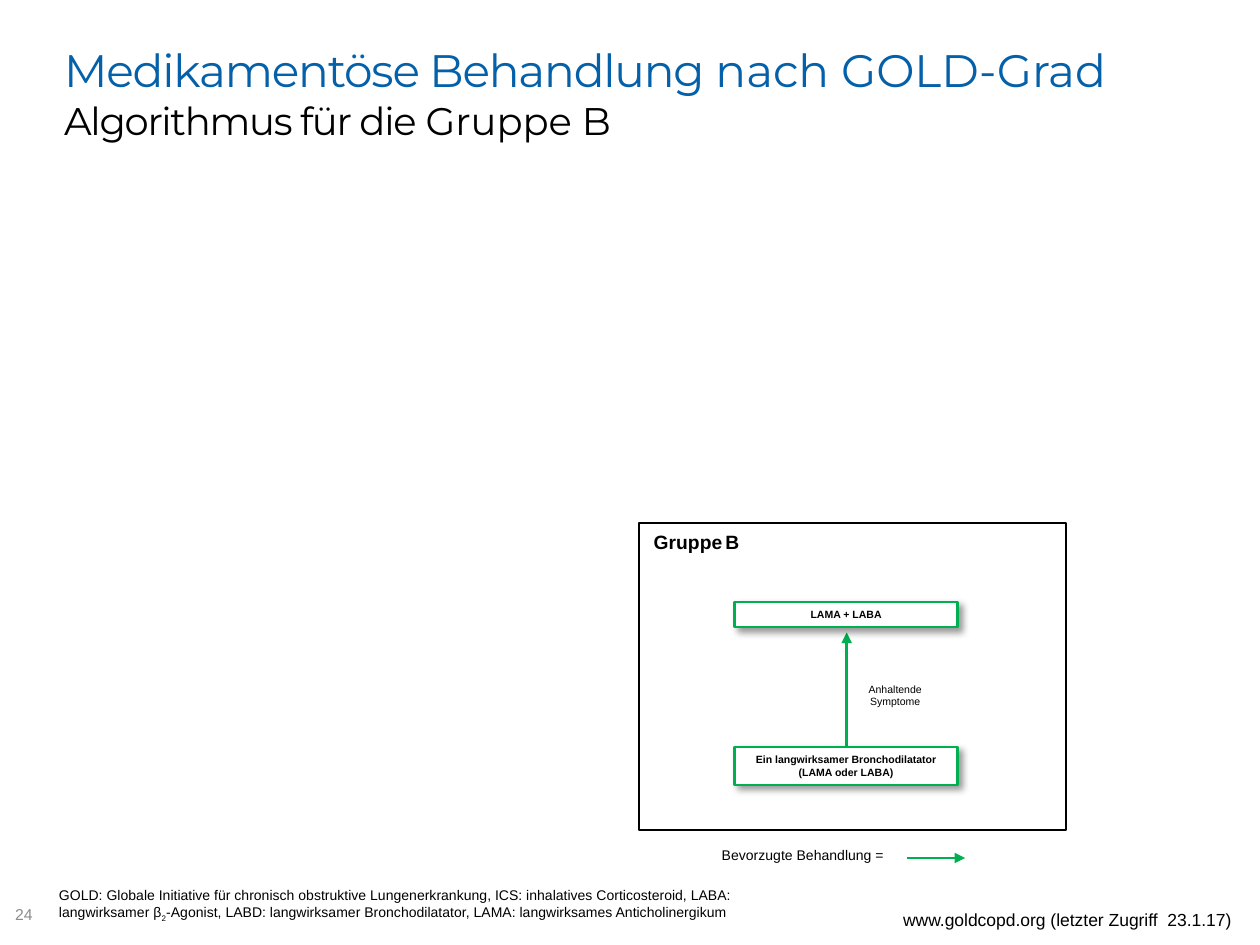
from dataclasses import dataclass

from lxml import etree
from pptx import Presentation
from pptx import util as u
from pptx.dml import color as dml
from pptx.enum import shapes, text
from pptx.oxml import ns

BLACK, WHITE, GREEN = "000000", "FFFFFF", "00B050"
BLUE, GREY = "0460A9", "8C8C8C"
CENTER, RIGHT = text.PP_ALIGN.CENTER, text.PP_ALIGN.RIGHT
MIDDLE, TOP = text.MSO_ANCHOR.MIDDLE, text.MSO_ANCHOR.TOP
INSETS = (0.1, 0.05, 0.1, 0.05)


@dataclass
class Span:
    words: str
    size: float
    color: str = BLACK
    bold: bool = False
    font: str = "Arial"
    spacing: float = 0
    baseline: int = 0


@dataclass
class Area:
    left: float
    top: float
    width: float
    height: float

    def lengths(self) -> list:
        return [u.Inches(n) for n in (self.left, self.top, self.width, self.height)]


@dataclass
class Step:
    area: Area
    lines: list[str]


@dataclass
class Arrow:
    start: tuple[float, float]
    end: tuple[float, float]
    weight: float


def rgb(value: str) -> dml.RGBColor:
    return dml.RGBColor.from_string(value)


def write(box, lines: list[list[Span]], align=None, anchor=TOP, insets=INSETS,
          line_spacing=None, grow=True) -> None:
    """Fill a box with one paragraph whose lines are separated by breaks."""
    frame = box.text_frame
    frame.word_wrap = True
    frame.auto_size = text.MSO_AUTO_SIZE.SHAPE_TO_FIT_TEXT if grow else text.MSO_AUTO_SIZE.NONE
    frame.vertical_anchor = anchor
    (frame.margin_left, frame.margin_top,
     frame.margin_right, frame.margin_bottom) = [u.Inches(n) for n in insets]
    para = frame.paragraphs[0]
    para.alignment = align
    para.line_spacing = line_spacing
    for number, line in enumerate(lines):
        if number:
            para.add_line_break()
        for span in line:
            run = para.add_run()
            run.text = span.words
            run.font.name = span.font
            run.font.size = u.Pt(span.size)
            run.font.bold = span.bold
            run.font.color.rgb = rgb(span.color)
            properties = run._r.get_or_add_rPr()
            if span.spacing:
                properties.set("spc", str(round(span.spacing * 100)))
            if span.baseline:
                properties.set("baseline", str(span.baseline * 1000))


def add_text(page, area: Area, lines: list[list[Span]], **layout) -> None:
    write(page.shapes.add_textbox(*area.lengths()), lines, **layout)


def add_frame(page, area: Area, line: str, fill: str | None = None):
    box = page.shapes.add_shape(shapes.MSO_SHAPE.RECTANGLE, *area.lengths())
    box.shadow.inherit = False
    if fill:
        box.fill.solid()
        box.fill.fore_color.rgb = rgb(fill)
    else:
        box.fill.background()
    box.line.color.rgb = rgb(line)
    box.line.width = u.Pt(1.25)
    return box


def add_step(page, step: Step) -> None:
    box = add_frame(page, step.area, GREEN, WHITE)
    effects = box._element.spPr.find(ns.qn("a:effectLst"))
    shadow = etree.SubElement(effects, ns.qn("a:outerShdw"), blurRad=str(u.Pt(4)),
                              dist=str(u.Pt(3)), dir=str(45 * 60000),
                              algn="tl", rotWithShape="0")
    tint = etree.SubElement(shadow, ns.qn("a:srgbClr"), val=BLACK)
    etree.SubElement(tint, ns.qn("a:alpha"), val="40000")
    write(box, [[Span(line, 6, bold=True)] for line in step.lines],
          align=CENTER)


def add_arrow(page, arrow: Arrow) -> None:
    ends = [u.Inches(n) for n in arrow.start + arrow.end]
    line = page.shapes.add_connector(shapes.MSO_CONNECTOR.STRAIGHT, *ends)
    line.line.color.rgb = rgb(GREEN)
    line.line.width = u.Pt(arrow.weight)
    etree.SubElement(line.line._get_or_add_ln(), ns.qn("a:tailEnd"), type="triangle")
    etree.SubElement(line._element.spPr, ns.qn("a:effectLst"))


def main() -> None:
    deck = Presentation()
    deck.slide_width, deck.slide_height = u.Inches(10), u.Inches(7.5)
    page = deck.slides.add_slide(deck.slide_layouts[6])

    # Title
    title = {"font": "Montserrat", "color": BLUE}
    subtitle = {"font": "Montserrat", "color": BLACK}
    add_text(page, Area(0.51, 0.21, 9.13, 1.05), [
        [Span("Medikamentöse Behandlung ", 26, spacing=-0.7, **title),
         Span("nach GOLD-Grad ", 26, **title)],
        [Span("Algorithmus für die ", 22, spacing=-0.7, **subtitle),
         Span("Gruppe B", 22, **subtitle)],
    ], anchor=MIDDLE, insets=(0, 0, 0, 0), grow=False)

    # Group panel
    add_frame(page, Area(5.07, 4.15, 3.39, 2.44), BLACK)
    add_text(page, Area(5.09, 4.16, 0.96, 0.29),
             [[Span("Gruppe", 11, bold=True), Span(" ", 6, bold=True),
               Span("B", 11, bold=True)]])

    # Treatment steps and escalation
    add_arrow(page, Arrow((6.72, 5.93), (6.72, 5.02), 2))
    add_text(page, Area(6.69, 5.37, 0.83, 0.3),
             [[Span("Anhaltende Symptome", 6)]], align=CENTER)
    for step in (
        Step(Area(5.83, 5.93, 1.77, 0.3),
             ["Ein langwirksamer Bronchodilatator", "(LAMA oder LABA)"]),
        Step(Area(5.83, 4.78, 1.77, 0.2), ["LAMA + LABA"]),
    ):
        add_step(page, step)

    # Legend
    add_text(page, Area(5.63, 6.67, 2.44, 0.37), [[Span("Bevorzugte Behandlung =", 8)]])
    add_arrow(page, Arrow((7.2, 6.81), (7.66, 6.81), 1.5))

    # Footer: abbreviations, page number, source
    add_text(page, Area(0.37, 6.99, 5.93, 0.37), [[
        Span("GOLD: Globale Initiative für chronisch obstruktive Lungenerkrankung, "
             "ICS: inhalatives Corticosteroid, LABA: langwirksamer β", 8),
        Span("2", 8, baseline=-25),
        Span("-Agonist, LABD: langwirksamer Bronchodilatator, "
             "LAMA: langwirksames Anticholinergikum", 8),
    ]])
    add_text(page, Area(0, 7.06, 0.31, 0.4), [[Span("24", 9, GREY)]],
             anchor=MIDDLE, insets=(0.12, 0.05, 0.05, 0.05), grow=False)
    add_text(page, Area(6.94, 7.15, 2.93, 0.29),
             [[Span("www.goldcopd.org (letzter Zugriff  23.1.17)", 10)]],
             align=RIGHT, line_spacing=1.1)

    deck.save("out.pptx")


if __name__ == "__main__":
    main()
